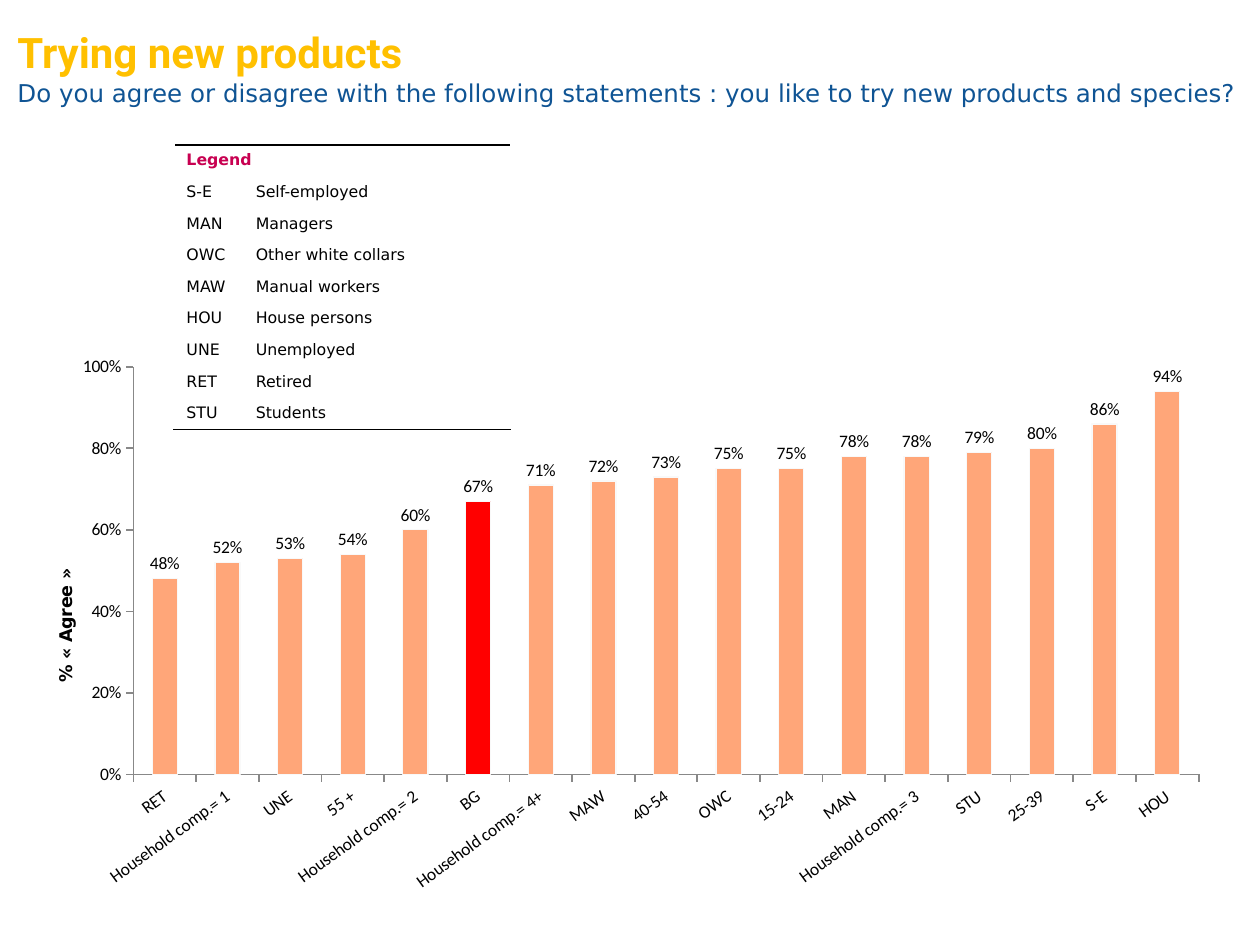
import pptx
import pptx.chart.data
import pptx.dml.color
import pptx.enum.chart
import pptx.enum.text
import pptx.oxml
import pptx.oxml.ns
import pptx.util
from dataclasses import dataclass

Inches = pptx.util.Inches
Pt = pptx.util.Pt
qn = pptx.oxml.ns.qn
nsdecls = pptx.oxml.ns.nsdecls
XL = pptx.enum.chart


@dataclass
class Theme:
    gold: str = "FFC000"
    blue: str = "0F5494"
    crimson: str = "C80051"
    black: str = "000000"
    axis: str = "888888"
    bar: str = "FFA679"
    bar_edge: str = "F9F9F9"
    highlight: str = "FF0000"
    title: int = 24
    question: int = 14
    chart: int = 10
    legend: int = 9
    heading_face: str = "Roboto"
    body_face: str = "DejaVu Sans"
    chart_face: str = "Calibri"


theme = Theme()


def style(font, face, size, color, bold=False):
    font.name = face
    font.size = Pt(size)
    font.bold = bold
    font.color.rgb = pptx.dml.color.RGBColor.from_string(color)


def set_layout(parent, index, **places):
    for old in parent.findall(qn("c:layout")):
        parent.remove(old)
    settings = "".join(f'<c:{key} val="{value}"/>' for key, value in places.items())
    parent.insert(index, pptx.oxml.parse_xml(
        f'<c:layout {nsdecls("c")}>'
        f"<c:manualLayout>{settings}</c:manualLayout></c:layout>"))


deck = pptx.Presentation()
deck.slide_width = Inches(10)
deck.slide_height = Inches(7.5)
slide = deck.slides.add_slide(deck.slide_layouts[6])

headings = [
    ("Trying new products", (0.04, -0.1, 9.37, 1.02), pptx.enum.text.MSO_ANCHOR.MIDDLE,
     theme.heading_face, theme.title, theme.gold, True),
    ("Do you agree or disagree with the following statements : "
     "you like to try new products and species?",
     (0.04, 0.57, 10.24, 0.57), pptx.enum.text.MSO_ANCHOR.TOP,
     theme.body_face, theme.question, theme.blue, False),
]
for wording, place, anchor, face, size, color, bold in headings:
    heading = slide.shapes.add_textbox(*map(Inches, place)).text_frame
    heading.word_wrap = True
    heading.vertical_anchor = anchor
    run = heading.paragraphs[0].add_run()
    run.text = wording
    style(run.font, face, size, color, bold)

agreement = [
    ("RET", 0.48), ("Household comp.= 1", 0.52), ("UNE", 0.53), ("55 +", 0.54),
    ("Household comp.= 2", 0.6), ("BG", 0.67), ("Household comp.= 4+", 0.71),
    ("MAW", 0.72), ("40-54", 0.73), ("OWC", 0.75), ("15-24", 0.75), ("MAN", 0.78),
    ("Household comp.= 3", 0.78), ("STU", 0.79), ("25-39", 0.8), ("S-E", 0.86),
    ("HOU", 0.94),
]
groups, shares = zip(*agreement)
survey = pptx.chart.data.CategoryChartData(number_format="0%")
survey.categories = groups
survey.add_series("Series 1", shares)
chart = slide.shapes.add_chart(
    XL.XL_CHART_TYPE.COLUMN_CLUSTERED,
    Inches(0.35), Inches(2.6), Inches(9.21), Inches(4.88), survey).chart
chart.has_legend = False
chart.has_title = False
style(chart.font, theme.body_face, theme.chart, theme.black)
plot_area = chart._chartSpace.find(qn("c:chart")).find(qn("c:plotArea"))
set_layout(plot_area, 0, layoutTarget="inner", xMode="edge", yMode="edge",
           x=0.077, y=0.064, w=0.918, h=0.663)

for axis in (chart.category_axis, chart.value_axis):
    axis.has_major_gridlines = False
    axis.major_tick_mark = XL.XL_TICK_MARK.OUTSIDE
    axis.minor_tick_mark = XL.XL_TICK_MARK.NONE
    axis.format.line.color.rgb = pptx.dml.color.RGBColor.from_string(theme.axis)
    axis.format.line.width = Pt(1)
    style(axis.tick_labels.font, theme.chart_face, theme.chart, theme.black)

group_axis, share_axis = chart.category_axis, chart.value_axis
group_axis.tick_label_position = XL.XL_TICK_LABEL_POSITION.LOW
group_axis._element.find(qn("c:txPr")).find(qn("a:bodyPr")).set("rot", str(-36 * 60000))
share_axis.minimum_scale = 0
share_axis.maximum_scale = 1
share_axis.major_unit = 0.2
share_axis.tick_labels.number_format = "0%"
share_axis.tick_labels.number_format_is_linked = False

agree = share_axis.axis_title
run = agree.text_frame.paragraphs[0].add_run()
run.text = "% «\u00a0Agree\u00a0»".replace("\u00a0", " ")
style(run.font, theme.body_face, theme.chart, theme.black, True)
agree.text_frame._txBody.find(qn("a:bodyPr")).set("rot", str(-90 * 60000))
set_layout(agree._element, 1, xMode="edge", yMode="edge", x=0.006, y=0.387)

plot = chart.plots[0]
plot.gap_width = 150
plot.vary_by_categories = False
bars = plot.series[0]
bars.invert_if_negative = False
country = bars.points[groups.index("BG")]
for part, color in ((bars, theme.bar), (country, theme.highlight)):
    part.format.fill.solid()
    part.format.fill.fore_color.rgb = pptx.dml.color.RGBColor.from_string(color)
    part.format.line.color.rgb = pptx.dml.color.RGBColor.from_string(theme.bar_edge)
    part.format.line.width = Pt(0.75)
labels = bars.data_labels
labels.show_value = True
labels.position = XL.XL_LABEL_POSITION.OUTSIDE_END
labels.number_format = "0%"
labels.number_format_is_linked = False
style(labels.font, theme.chart_face, theme.chart, theme.black)

legend_rows = [
    ("Legend", ""), ("S-E", "Self-employed"), ("MAN", "Managers"),
    ("OWC", "Other white collars"), ("MAW", "Manual workers"),
    ("HOU", "House persons"), ("UNE", "Unemployed"), ("RET", "Retired"),
    ("STU", "Students"),
]
legend = slide.shapes.add_table(
    len(legend_rows), 2, Inches(1.38), Inches(1.15), Inches(2.67), Inches(2.25)).table
legend.first_row = False
legend.horz_banding = False
for column, width in zip(legend.columns, (0.55, 2.12)):
    column.width = Inches(width)
legend.cell(0, 0).merge(legend.cell(0, 1))
edges = {0: "lnT", len(legend_rows) - 1: "lnB"}
for row, entries in enumerate(legend_rows):
    legend.rows[row].height = Inches(0.25)
    for column, wording in enumerate(entries):
        cell = legend.cell(row, column)
        cell.fill.background()
        cell.margin_right = 0
        if wording:
            run = cell.text_frame.paragraphs[0].add_run()
            run.text = wording
            style(run.font, theme.body_face, theme.legend,
                  theme.black if row else theme.crimson, row == 0)
        if row in edges:
            cell._tc.get_or_add_tcPr().insert(0, pptx.oxml.parse_xml(
                f'<a:{edges[row]} {nsdecls("a")} w="{Pt(1)}">'
                f'<a:solidFill><a:srgbClr val="{theme.black}"/></a:solidFill>'
                f"</a:{edges[row]}>"))

deck.save("out.pptx")
